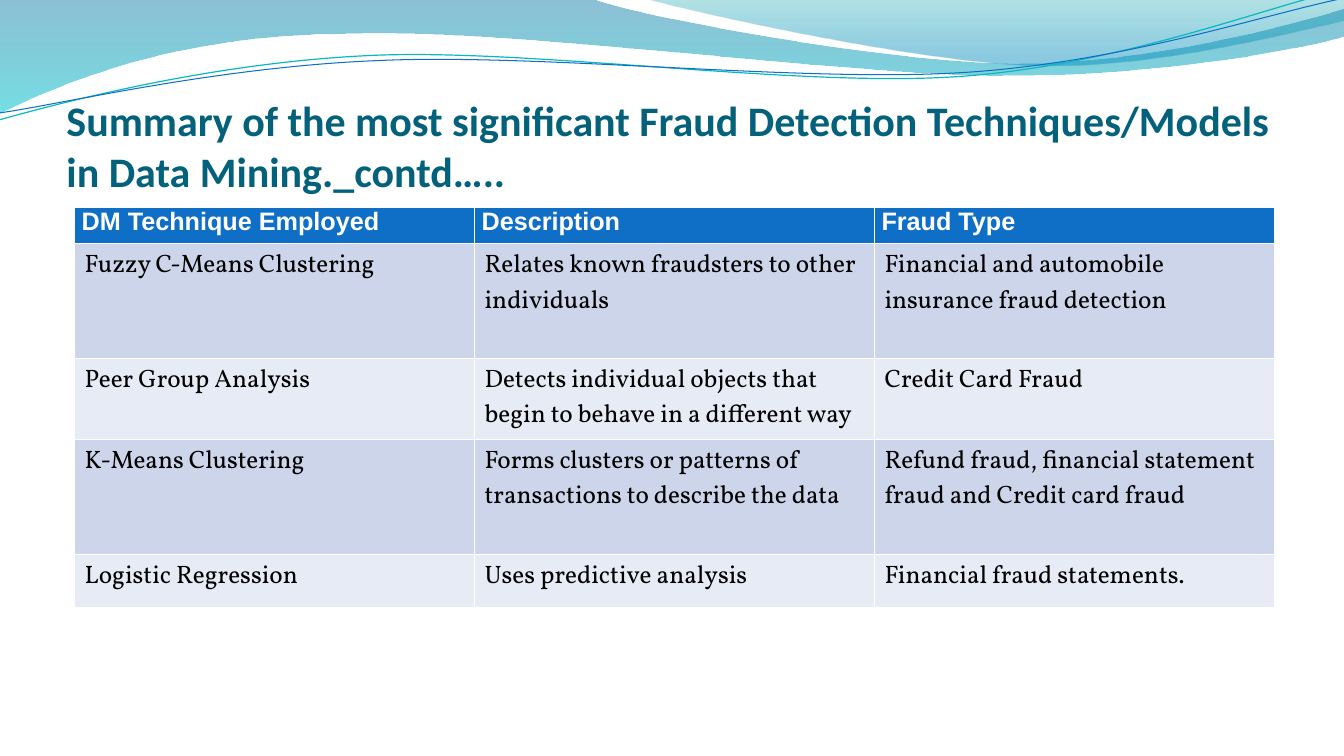
from dataclasses import dataclass
from math import cos, radians, sin

from lxml.etree import SubElement
from pptx import Presentation
from pptx.dml.color import RGBColor
from pptx.enum.text import MSO_ANCHOR as Anchor, PP_ALIGN as Align
from pptx.oxml.ns import qn
from pptx.util import Inches, Pt

Point = tuple[float, float]


@dataclass
class Wave:
    """A curved outline: each step is one line point or three curve points."""
    start: Point
    steps: list[list[Point]]
    stops: tuple = ()      # (position %, colour, opacity %)
    line: str = ""
    width: float = 0
    hub: Point = (0, 0)    # centre of the turn
    turn: float = 0


@dataclass
class Look:
    font: str
    size: float
    color: str
    bold: bool = False


TILT = -2.7
WAVES = [
    Wave((0, -0.01), [
        [(5.87, -0.01)],
        [(6.34, 0.17), (8.85, 0.63), (10.11, 0.63)],
        [(11.38, 0.63), (12.78, 0.26), (13.33, 0.09)],
        [(13.35, 0.36)],
        [(13.11, 0.44), (11.6, 0.76), (9.94, 0.75)],
        [(8.29, 0.75), (5.09, 0.28), (3.43, 0.34)],
        [(1.72, 0.35), (0.61, 0.83), (-0.01, 1.13)],
    ], stops=((0, "0074A1", 45), (100, "00C6CF", 55))),
    Wave((6.39, -0.01), [
        [(6.79, 0.11), (9.09, 0.62), (10.25, 0.65)],
        [(11.41, 0.69), (12.82, 0.32), (13.33, 0.21)],
        [(13.33, 0)],
    ], stops=((0, "00A1A9", 30), (80, "008BBF", 45))),
    Wave((-0.01, 1.19), [
        [(0.64, 1.01), (2.11, 0.62), (3.69, 0.55)],
        [(5.27, 0.48), (7.9, 0.87), (9.5, 0.76)],
        [(11.1, 0.65), (12.52, 0.08), (13.31, -0.1)],
    ], line="0AB8BF", width=0.85, hub=(6.65, 0.57), turn=TILT),
    Wave((0, 1.12), [
        [(0.63, 1.03), (2.18, 0.66), (3.78, 0.6)],
        [(5.37, 0.53), (7.96, 0.82), (9.55, 0.72)],
        [(11.15, 0.62), (12.55, 0.14), (13.34, -0.02)],
    ], line="0F6FC6", width=0.75, hub=(6.67, 0.59), turn=TILT),
]

TITLE = ("Summary of the most significant Fraud Detection "
         "Techniques/Models in Data Mining._contd…..")
ROWS = [
    ("DM Technique Employed ", "Description ", "Fraud Type "),
    ("Fuzzy C-Means Clustering",
     "Relates known fraudsters to other individuals",
     "Financial and automobile insurance fraud detection"),
    ("Peer Group Analysis",
     "Detects individual objects that begin to behave in a different way",
     "Credit Card Fraud"),
    ("K-Means Clustering",
     "Forms clusters or patterns of transactions to describe the data",
     "Refund fraud, financial statement fraud and Credit card fraud"),
    ("Logistic Regression", "Uses predictive analysis",
     "Financial fraud statements."),
]
HEIGHTS = [0.36, 1.14, 0.8, 1.14, 0.53]
WIDTH = 11.9
BANDS = ["E7EBF5", "CCD5EA"]

HEAD = Look("Arial", 18, "FFFFFF", True)
BODY = Look("Vollkorn", 18, "000000")
TOP = Look("Calibri", 30, "04617B", True)


def rgb(color: str) -> RGBColor:
    return RGBColor.from_string(color)


def style(para, look: Look) -> None:
    for run in para.runs:
        font = run.font
        font.name, font.size, font.bold = look.font, Pt(look.size), look.bold
        font.color.rgb = rgb(look.color)


def level(wave: Wave, point: Point) -> Point:
    """Place of a point before the shape is turned."""
    angle = radians(-wave.turn)
    x, y = point[0] - wave.hub[0], point[1] - wave.hub[1]
    return (Inches(wave.hub[0] + x * cos(angle) - y * sin(angle)),
            Inches(wave.hub[1] + x * sin(angle) + y * cos(angle)))


def bend(shape, steps: list[list[Point]]) -> None:
    """Join each three straight steps of a curve into one Bézier."""
    lines = iter(list(shape._element.iter(qn("a:lnTo"))))
    for step in steps:
        first = next(lines)
        if len(step) == 3:
            first.tag = qn("a:cubicBezTo")
            for _ in range(2):
                other = next(lines)
                first.append(other[0])
                other.getparent().remove(other)


def fade(shape, stops: tuple) -> None:
    """Fill from top to bottom with see-through colours."""
    shape.fill.gradient()
    grad = shape._element.spPr.find(qn("a:gradFill"))
    for child in list(grad):
        grad.remove(child)
    group = SubElement(grad, qn("a:gsLst"))
    for pos, color, alpha in stops:
        stop = SubElement(group, qn("a:gs"), pos=str(pos * 1000))
        tint = SubElement(stop, qn("a:srgbClr"), val=color)
        SubElement(tint, qn("a:alpha"), val=str(alpha * 1000))
    SubElement(grad, qn("a:lin"), ang="5400000", scaled="0")


def draw_wave(slide, wave: Wave) -> None:
    pen = slide.shapes.build_freeform(*level(wave, wave.start))
    pen.add_line_segments([level(wave, p) for step in wave.steps for p in step],
                          close=bool(wave.stops))
    shape = pen.convert_to_shape()
    bend(shape, wave.steps)
    shape.rotation = wave.turn
    shape.shadow.inherit = False
    if wave.stops:
        fade(shape, wave.stops)
        shape.line.fill.background()
    else:
        shape.fill.background()
        shape.line.color.rgb = rgb(wave.line)
        shape.line.width = Pt(wave.width)


def draw_title(slide) -> None:
    box = slide.shapes.add_textbox(Inches(0.66), Inches(0.88),
                                   Inches(12), Inches(1.06))
    frame = box.text_frame
    frame.word_wrap = True
    frame.vertical_anchor = Anchor.BOTTOM
    frame.margin_left = frame.margin_right = frame.margin_bottom = 0
    frame.text = TITLE
    style(frame.paragraphs[0], TOP)


def edge(cell) -> None:
    props = cell._tc.get_or_add_tcPr()
    for side in "LRTB":
        line = SubElement(props, qn(f"a:ln{side}"), w=str(Pt(1)))
        fill = SubElement(line, qn("a:solidFill"))
        SubElement(fill, qn("a:srgbClr"), val="FFFFFF")


def draw_table(slide) -> None:
    table = slide.shapes.add_table(
        len(ROWS), len(ROWS[0]), Inches(0.74), Inches(2.06),
        Inches(WIDTH), Inches(sum(HEIGHTS))).table
    table.first_row = table.horz_banding = False
    for r, (texts, height) in enumerate(zip(ROWS, HEIGHTS)):
        table.rows[r].height = Inches(height)
        for c, text in enumerate(texts):
            cell = table.cell(r, c)
            cell.text_frame.text = text
            para = cell.text_frame.paragraphs[0]
            style(para, BODY if r else HEAD)
            if r == 0:
                para.alignment = Align.JUSTIFY
                cell.margin_left = cell.margin_right = Inches(0.07)
                cell.margin_top = cell.margin_bottom = 0
            edge(cell)
            cell.fill.solid()
            cell.fill.fore_color.rgb = rgb(BANDS[r % 2] if r else "0F6FC6")


def main() -> None:
    deck = Presentation()
    deck.slide_width, deck.slide_height = Inches(13.33), Inches(7.5)
    slide = deck.slides.add_slide(deck.slide_layouts[6])
    for wave in WAVES:
        draw_wave(slide, wave)
    draw_title(slide)
    draw_table(slide)
    deck.save("out.pptx")


if __name__ == "__main__":
    main()
